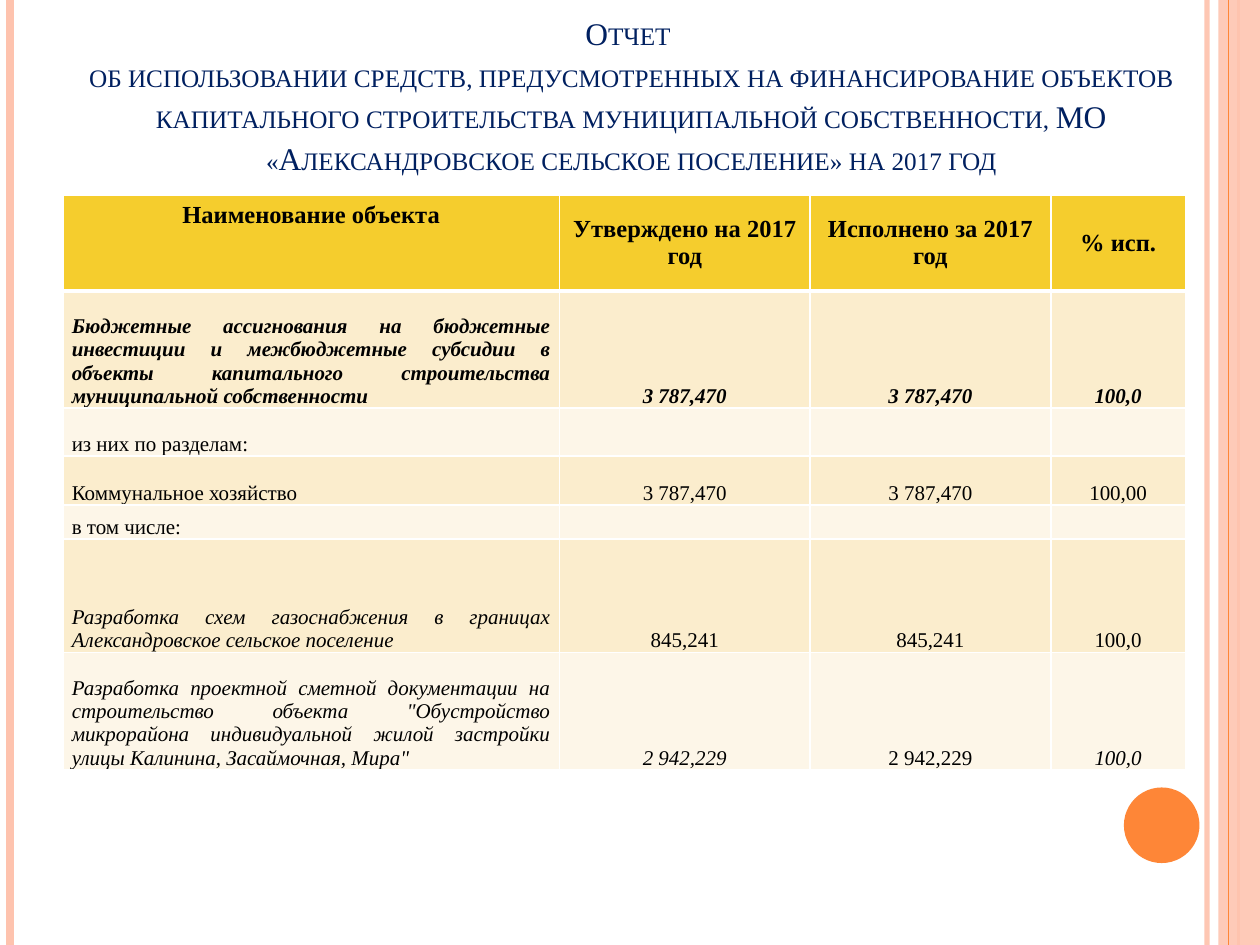
from lxml.etree import SubElement
from pptx import Presentation
from pptx.dml.color import RGBColor
from pptx.enum.shapes import MSO_CONNECTOR, MSO_SHAPE
from pptx.enum.text import MSO_ANCHOR, PP_ALIGN
from pptx.oxml import parse_xml
from pptx.oxml.ns import nsdecls, qn
from pptx.util import Inches, Pt

FONT = "Times New Roman"
PINK, ORANGE, NAVY = "FEC3AE", "FE8637", "002060"
HEADER_FILL, BAND_FILLS = "F5CD2D", ("FBEDCD", "FDF6E8")
TITLE = (
    "Отчет \vоб использовании средств, предусмотренных на финансирование "
    "объектов капитального строительства муниципальной собственности, "
    "МО «Александровское сельское поселение» на 2017 год"
)
COLUMN_WIDTHS = (3.94, 1.99, 1.91, 1.07)
ROW_HEIGHTS = (0.76, 0.93, 0.38, 0.39, 0.27, 0.9, 0.93)
HEADERS = ("Наименование объекта", "Утверждено на 2017 год",
           "Исполнено за 2017 год", "% исп.")
ROWS = (
    ("Бюджетные ассигнования на бюджетные инвестиции и межбюджетные субсидии "
     "в объекты капитального строительства муниципальной собственности ",
     "3 787,470", "3 787,470", "100,0"),
    ("из них по разделам:", "", "", ""),
    ("Коммунальное хозяйство", "3 787,470", "3 787,470", "100,00"),
    ("в том числе:", "", "", ""),
    ("Разработка схем газоснабжения в границах Александровское сельское "
     "поселение", "845,241", "845,241", "100,0"),
    ("Разработка проектной сметной документации на строительство объекта "
     "\"Обустройство микрорайона индивидуальной жилой застройки улицы "
     "Калинина, Засаймочная, Мира\"", "2 942,229", "2 942,229", "100,0"),
)
TOTAL_ROW = 1
ITALIC_CELLS = {(1, 0), (1, 1), (1, 2), (1, 3), (5, 0), (6, 0), (6, 1), (6, 3)}


def paint(color_format, color, alpha=100):
    color_format.rgb = RGBColor.from_string(color)
    if alpha < 100:
        srgb = color_format._xFill.find(qn("a:srgbClr"))
        SubElement(srgb, qn("a:alpha")).set("val", str(alpha * 1000))


def write(frame, text, size=12, color="000000", bold=False, italic=False,
          align=PP_ALIGN.CENTER, small_caps=False, spacing=None):
    paragraph = frame.paragraphs[0]
    paragraph.alignment = align
    paragraph.line_spacing = spacing
    if not text:
        paragraph._p.get_or_add_endParaRPr().set("sz", str(size * 100))
        return
    paragraph.text = text
    for run in paragraph.runs:
        run.font.name = FONT
        run.font.size = Pt(size)
        run.font.bold = bold
        run.font.italic = italic
        paint_font(run.font, color)
        if small_caps:
            run.font._element.set("cap", "small")


def paint_font(font, color):
    font.fill.solid()
    paint(font.fill.fore_color, color)


def add_stripe(slide, x, color, width, alpha=100):
    stripe = slide.shapes.add_connector(
        MSO_CONNECTOR.STRAIGHT, Inches(x), 0, Inches(x), Inches(7.5))
    stripe.line.width = Pt(width)
    stripe.line.fill.solid()
    paint(stripe.line.fill.fore_color, color, alpha)
    SubElement(stripe._element.spPr, qn("a:effectLst"))


def add_block(slide, kind, left, top, width, height, color, alpha=100):
    block = slide.shapes.add_shape(
        kind, Inches(left), Inches(top), Inches(width), Inches(height))
    block.shadow.inherit = False
    block.line.fill.background()
    block.fill.solid()
    paint(block.fill.fore_color, color, alpha)


def add_title(slide):
    box = slide.shapes.add_textbox(
        Inches(0.51), Inches(0.36), Inches(9), Inches(1.09))
    box.text_frame.word_wrap = True
    box.text_frame.vertical_anchor = MSO_ANCHOR.BOTTOM
    write(box.text_frame, TITLE, size=18, color=NAVY, small_caps=True,
          spacing=1.1)


def set_borders(cell, top=1, bottom=1):
    properties = cell._tc.get_or_add_tcPr()
    widths = {"lnL": 1, "lnR": 1, "lnT": top, "lnB": bottom}
    for index, (side, width) in enumerate(widths.items()):
        properties.insert(index, parse_xml(
            f'<a:{side} {nsdecls("a")} w="{Pt(width)}"><a:solidFill>'
            f'<a:srgbClr val="FFFFFF"/></a:solidFill></a:{side}>'))


def format_cell(cell, row, column):
    header = row == 0
    cell.fill.solid()
    paint(cell.fill.fore_color,
          HEADER_FILL if header else BAND_FILLS[(row - 1) % 2])
    set_borders(cell, top=3 if row == 1 else 1, bottom=3 if header else 1)
    if header and column == 0:
        cell.vertical_anchor = MSO_ANCHOR.TOP
        return
    cell.vertical_anchor = MSO_ANCHOR.MIDDLE if header else MSO_ANCHOR.BOTTOM
    cell.margin_left = cell.margin_right = Inches(0.07)
    cell.margin_top = cell.margin_bottom = 0


def add_report_table(slide):
    report = slide.shapes.add_table(
        len(ROW_HEIGHTS), len(COLUMN_WIDTHS), Inches(0.5), Inches(1.55),
        Inches(sum(COLUMN_WIDTHS)), Inches(sum(ROW_HEIGHTS))).table
    for column, width in zip(report.columns, COLUMN_WIDTHS):
        column.width = Inches(width)
    for row, height in zip(report.rows, ROW_HEIGHTS):
        row.height = Inches(height)
    for row, values in enumerate((HEADERS, *ROWS)):
        for column, value in enumerate(values):
            cell = report.cell(row, column)
            format_cell(cell, row, column)
            is_name = row > 0 and column == 0
            write(cell.text_frame, value, size=12 if row else 14,
                  bold=row <= TOTAL_ROW, italic=(row, column) in ITALIC_CELLS,
                  align=PP_ALIGN.JUSTIFY if is_name else PP_ALIGN.CENTER)


def main():
    deck = Presentation()
    deck.slide_width, deck.slide_height = Inches(10), Inches(7.5)
    slide = deck.slides.add_slide(deck.slide_layouts[6])
    add_stripe(slide, 9.58, PINK, 3, alpha=93)
    add_stripe(slide, 0.08, PINK, 4.5)
    add_stripe(slide, 9.83, PINK, 1.5)
    add_block(slide, MSO_SHAPE.RECTANGLE, 9.67, 0, 0.33, 7.5, PINK, alpha=87)
    add_stripe(slide, 9.75, ORANGE, 0.75)
    add_block(slide, MSO_SHAPE.OVAL, 8.92, 6.25, 0.6, 0.6, ORANGE)
    add_title(slide)
    add_report_table(slide)
    deck.save("out.pptx")


if __name__ == "__main__":
    main()
